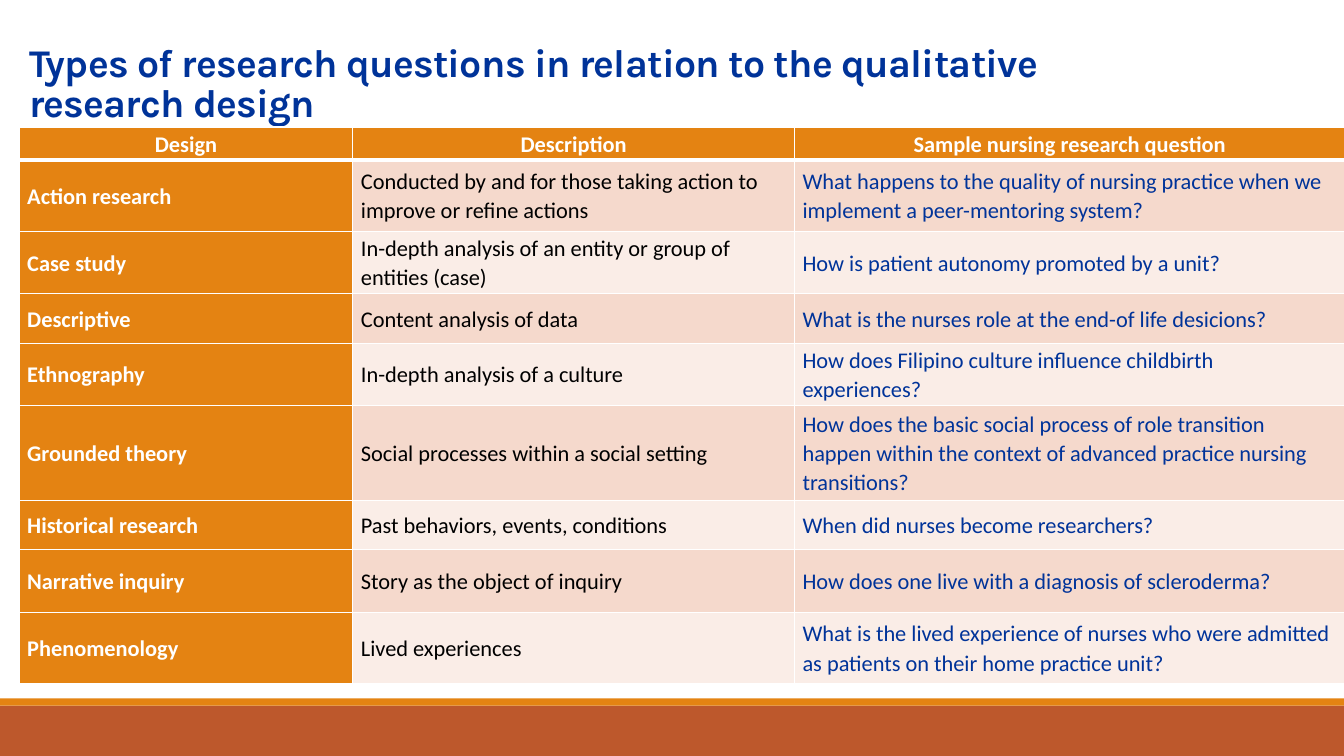
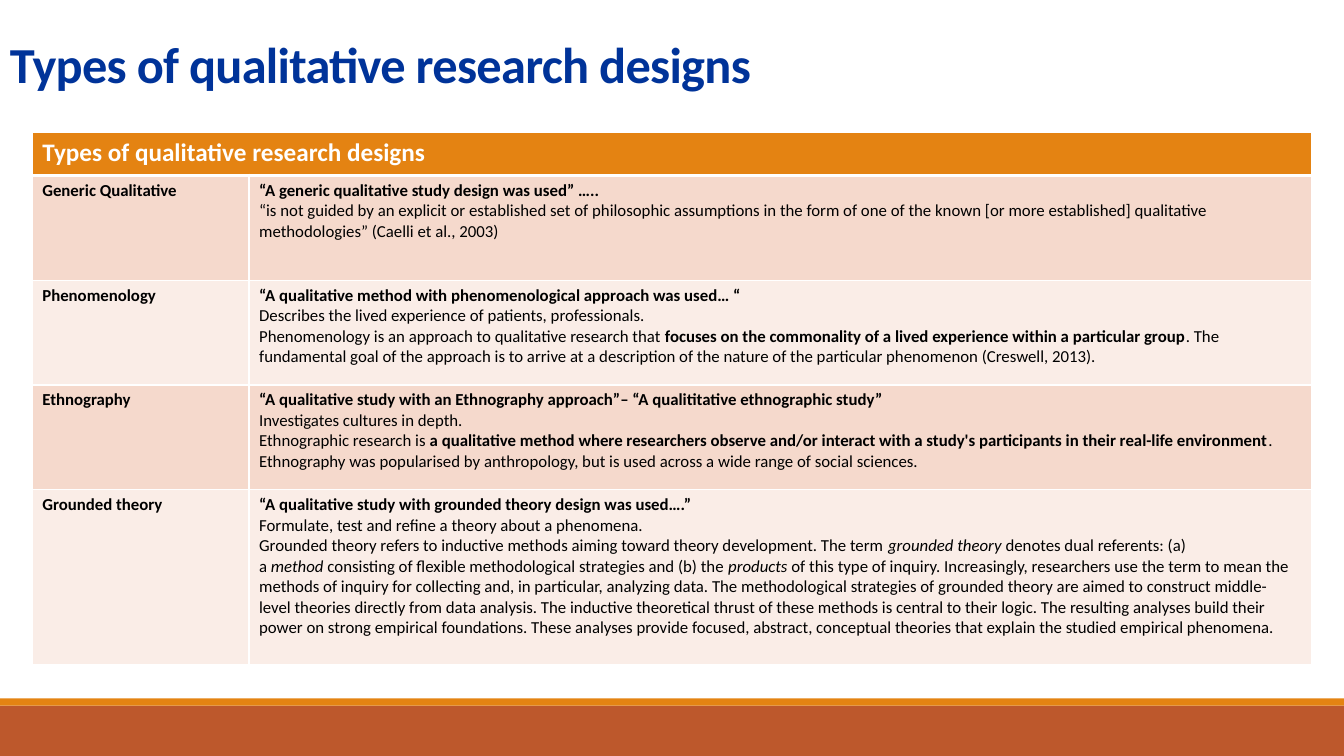
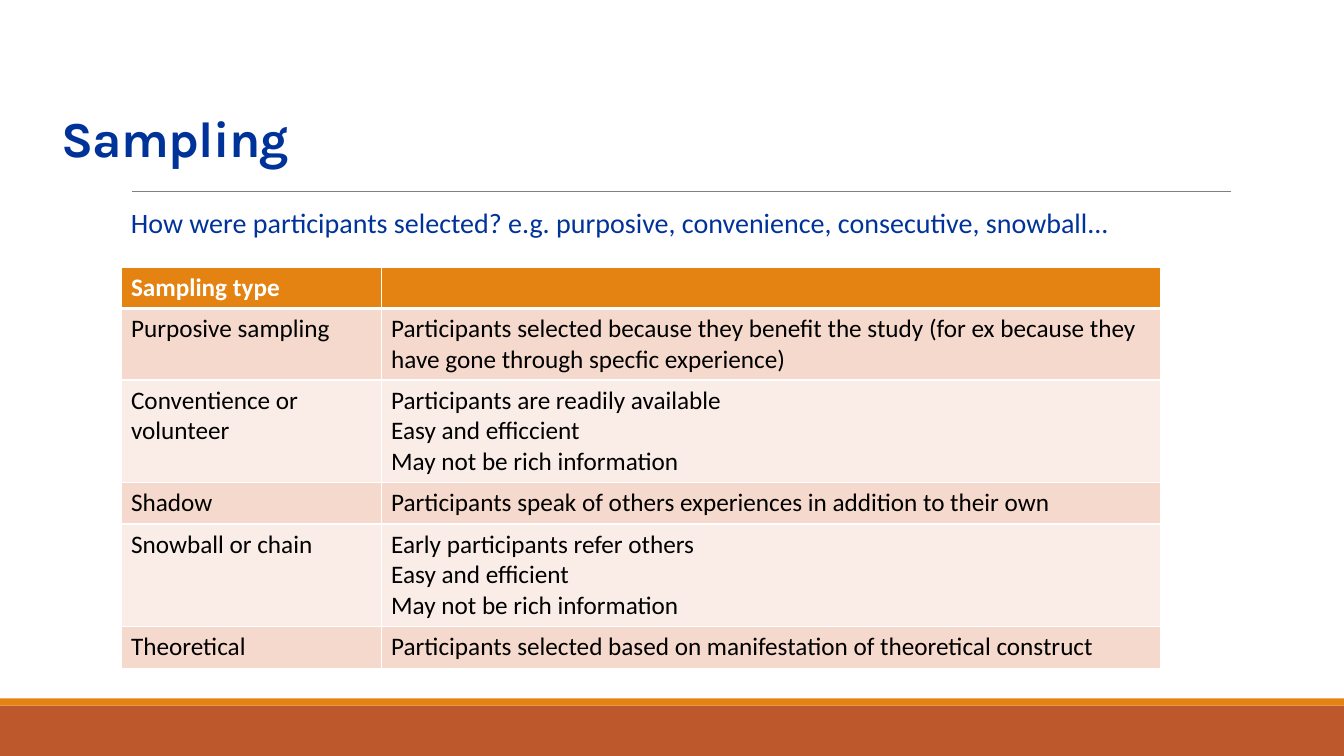
from lxml import etree
from pptx import Presentation
from pptx import util as u
from pptx.dml.color import RGBColor
from pptx.enum import shapes, text
from pptx.oxml.ns import qn

NAVY, ORANGE, RUST, GREY = "003399", "E48312", "BD582C", "808080"
WHITE, BLACK = "FFFFFF", "000000"
BANDS = ("F5D9CC", "FAEDE7")
BODY, HEADING = "Calibri", "Karla"
NBSP = chr(160)

DESIGN_ROWS = [
    ("Design", "Description", "Sample nursing research question"),
    ("Action research",
     "Conducted by and for those taking action to improve or refine actions",
     "What happens to the quality of nursing practice when we implement a peer-mentoring system?"),
    ("Case study",
     "In-depth analysis of an entity or group of entities (case)",
     "How is patient autonomy promoted by a unit?"),
    ("Descriptive", "Content analysis of data",
     "What is the nurses role at the end-of life desicions?"),
    ("Ethnography", "In-depth analysis of a culture",
     "How does Filipino culture influence childbirth experiences?"),
    ("Grounded theory", "Social processes within a social setting",
     "How does the basic social process of role transition happen within the context of "
     "advanced practice nursing transitions?"),
    ("Historical research", "Past behaviors, events, conditions",
     "When did nurses become researchers?"),
    ("Narrative inquiry", "Story as the object of inquiry",
     "How does one live with a diagnosis of scleroderma?"),
    ("Phenomenology", "Lived experiences",
     "What is the lived experience of nurses who were admitted as patients on their home "
     "practice unit?"),
]

APPROACH_ROWS = [
    ("Types of qualitative research designs", ""),
    ("Generic Qualitative", [
        [("“A generic qualitative study design was used” …..", "b")],
        "“is not guided by an explicit or established set of philosophic assumptions in the form "
        "of one of the known [or more established] qualitative methodologies” (Caelli et al., 2003)",
    ]),
    ("Phenomenology", [
        [("“A qualitative method with phenomenological approach was used… “", "b")],
        "Describes the lived experience of patients, professionals.",
        [("Phenomenology is an approach to qualitative research that~", ""),
         ("focuses on the commonality of a lived experience within a particular group", "b"),
         (". The fundamental goal of the approach is to arrive at a description of the nature of "
          "the particular phenomenon (Creswell, 2013).", "")],
    ]),
    ("Ethnography", [
        [("“A qualitative study with an Ethnography approach”– “A qualititative ethnographic "
          "study”", "b")],
        "Investigates cultures in depth.",
        [("Ethnographic research is~", ""),
         ("a qualitative method where researchers observe and/or interact with a study's "
          "participants in their real-life environment", "b"),
         (". Ethnography was popularised by anthropology, but is used across a wide range of "
          "social sciences.", "")],
    ]),
    ("Grounded theory", [
        [("“A qualitative study with grounded theory design was used….”", "b")],
        "Formulate, test and refine a theory about a phenomena.",
        [("Grounded~theory~refers to inductive methods aiming toward~theory~development. "
          "The term~", ""),
         ("grounded~theory~", "i"),
         ("denotes dual referents: (a) a~", ""),
         ("method", "i"),
         ("~consisting of flexible methodological strategies and (b) the~", ""),
         ("products", "i"),
         ("~of this type of inquiry. Increasingly, researchers use the term to mean the methods "
          "of inquiry for collecting and, in particular, analyzing data. The methodological "
          "strategies of~grounded~theory~are aimed to construct middle-level~theories~directly "
          "from data analysis. The inductive theoretical thrust of these methods is central to "
          "their logic. The resulting analyses build their power on strong empirical foundations. "
          "These analyses provide focused, abstract, conceptual~theories~that explain the studied "
          "empirical phenomena.", "")],
    ]),
]

SAMPLING_ROWS = [
    ("Sampling type", ""),
    ("Purposive sampling",
     "Participants selected because they benefit the study (for ex because they have gone "
     "through specfic experience)"),
    ("Conventience or volunteer",
     ["Participants are readily available", "Easy and efficcient", "May not be rich information"]),
    ("Shadow", "Participants speak of others experiences in addition to their own"),
    ("Snowball or chain",
     ["Early participants refer others", "Easy and efficient", "May not be rich information"]),
    ("Theoretical", "Participants selected based on manifestation of theoretical construct"),
]


def rgb(value):
    """Turn a hex string into a colour."""
    return RGBColor.from_string(value)


def set_font(p, size, color, bold=False, name=BODY):
    """Set the font of a whole paragraph."""
    p.font.name, p.font.size, p.font.bold = name, u.Pt(size), bold
    p.font.color.rgb = rgb(color)


def add_runs(p, content):
    """Fill a paragraph from a string or a list of (text, style) runs."""
    for words, style in [(content, "")] if isinstance(content, str) else content:
        if words:
            r = p.add_run()
            r.text = words.replace("~", NBSP)
            if style == "b":
                r.font.bold = True
            elif style == "i":
                r.font.italic = True


def add_text(slide, box, words, size, name=BODY, bold=False, spacing=0.9,
             anchor=text.MSO_ANCHOR.TOP):
    """Add a one-paragraph navy text box and return its paragraph."""
    tf = slide.shapes.add_textbox(*map(u.Inches, box)).text_frame
    tf.word_wrap, tf.vertical_anchor = True, anchor
    p = tf.paragraphs[0]
    add_runs(p, words)
    p.line_spacing = spacing
    set_font(p, size, NAVY, bold, name)
    return p


def add_title(slide, box, words, size, name=HEADING):
    """Add a bottom-anchored, slightly tightened title."""
    p = add_text(slide, box, words, size, name, True, 0.85, text.MSO_ANCHOR.BOTTOM)
    p.runs[0].font.bold = True
    p.runs[0]._r.get_or_add_rPr().set("spc", "-50")


def add_footer(slide):
    """Draw the two footer bands."""
    for top, height, color in ((7, 0.5, RUST), (6.93, 0.07, ORANGE)):
        sp = slide.shapes.add_shape(shapes.MSO_SHAPE.RECTANGLE, 0, u.Inches(top),
                                    u.Inches(13.33), u.Inches(height))
        sp.shadow.inherit = False
        sp.fill.solid()
        sp.fill.fore_color.rgb = rgb(color)
        sp.line.fill.background()


def add_rule(slide, left, top, width):
    """Draw the thin grey rule below a title."""
    line = slide.shapes.add_connector(
        shapes.MSO_CONNECTOR.STRAIGHT, u.Inches(left), u.Inches(top),
        u.Inches(left + width), u.Inches(top))
    line.line.color.rgb, line.line.width = rgb(GREY), u.Pt(0.5)
    etree.SubElement(line._element.spPr, qn("a:effectLst"))


def set_borders(cell, row):
    """Give a cell white borders, thick between the header and the body."""
    tc_pr = cell._tc.get_or_add_tcPr()
    thick = {0: "lnB", 1: "lnT"}.get(row)
    for i, side in enumerate(("lnL", "lnR", "lnT", "lnB")):
        ln = etree.Element(qn("a:" + side), w=str(u.Pt(3 if side == thick else 1)))
        fill = etree.SubElement(ln, qn("a:solidFill"))
        etree.SubElement(fill, qn("a:srgbClr"), val=WHITE)
        tc_pr.insert(i, ln)


def add_table(slide, left, top, widths, heights, rows, style):
    """Add a banded table; style(row, column) gives size, colour and bold."""
    table = slide.shapes.add_table(
        len(rows), len(widths), u.Inches(left), u.Inches(top),
        u.Inches(sum(widths)), u.Inches(sum(heights))).table
    for column, width in zip(table.columns, widths):
        column.width = u.Inches(width)
    for r, (height, values) in enumerate(zip(heights, rows)):
        table.rows[r].height = u.Inches(height)
        for c, value in enumerate(values):
            cell = table.cell(r, c)
            cell.fill.solid()
            cell.fill.fore_color.rgb = rgb(BANDS[(r - 1) % 2] if r else ORANGE)
            set_borders(cell, r)
            tf = cell.text_frame
            for i, content in enumerate([value] if isinstance(value, str) else value):
                p = tf.add_paragraph() if i else tf.paragraphs[0]
                add_runs(p, content)
                set_font(p, *style(r, c))
    return table


def design_slide(slide):
    """Build the table of designs and sample questions."""
    def style(r, c):
        """Style the header row and the first column in bold white."""
        return (16, WHITE, True) if r == 0 or c == 0 else (16, (BLACK, NAVY)[c - 1], False)

    add_title(slide, (0.19, 0, 11, 1.29),
              "Types of research questions in relation to the qualitative research design", 28)
    table = add_table(slide, 0.19, 1.26, (3.31, 4.38, 5.46),
                      (0.32, 0.71, 0.62, 0.49, 0.62, 0.94, 0.49, 0.62, 0.71),
                      DESIGN_ROWS, style)
    for i, cell in enumerate(table.iter_cells()):
        row, column = divmod(i, 3)
        cell.vertical_anchor = text.MSO_ANCHOR.MIDDLE
        cell.margin_left = cell.margin_right = u.Inches(0.08)
        cell.margin_top = cell.margin_bottom = u.Inches(0.02)
        p = cell.text_frame.paragraphs[0]
        p.line_spacing = 1.07
        if row == 0:
            p.alignment = text.PP_ALIGN.CENTER
        elif column == 0:
            cell.fill.fore_color.rgb = rgb(ORANGE)


def approach_slide(slide):
    """Build the table that explains each design."""
    def style(r, c):
        """Style the header in white and the first column in bold."""
        return (12, BLACK, c == 0) if r else (18, WHITE, True)

    add_title(slide, (0, 0, 11, 0.98), "Types of qualitative research designs", 36, BODY)
    table = add_table(slide, 0.32, 1.31, (2.15, 10.54), (0.43, 1.04, 1.04, 1.04, 1.73),
                      APPROACH_ROWS, style)
    table.cell(0, 0).merge(table.cell(0, 1))


def sampling_slide(slide):
    """Build the sampling question and its table."""
    def style(r, c):
        """Style the header in bold white."""
        return (18, BLACK, False) if r else (18, WHITE, True)

    add_title(slide, (0.51, 0.13, 11, 1.58), "Sampling", 36)
    add_rule(slide, 1.31, 1.9, 10.9)
    add_text(slide, (1.2, 2.03, 11, 0.5),
             "How were participants selected? e.g. purposive, convenience, consecutive, "
             "snowball...", 20)
    add_table(slide, 1.2, 2.65, (2.58, 7.73), (0.41, 0.71, 1.02, 0.41, 1.02, 0.41),
              SAMPLING_ROWS, style)


def main():
    """Build and save the presentation."""
    prs = Presentation()
    prs.slide_width, prs.slide_height = u.Inches(13.33), u.Inches(7.5)
    for build in (design_slide, approach_slide, sampling_slide):
        slide = prs.slides.add_slide(prs.slide_layouts[6])
        add_footer(slide)
        build(slide)
    prs.save("out.pptx")


if __name__ == "__main__":
    main()
